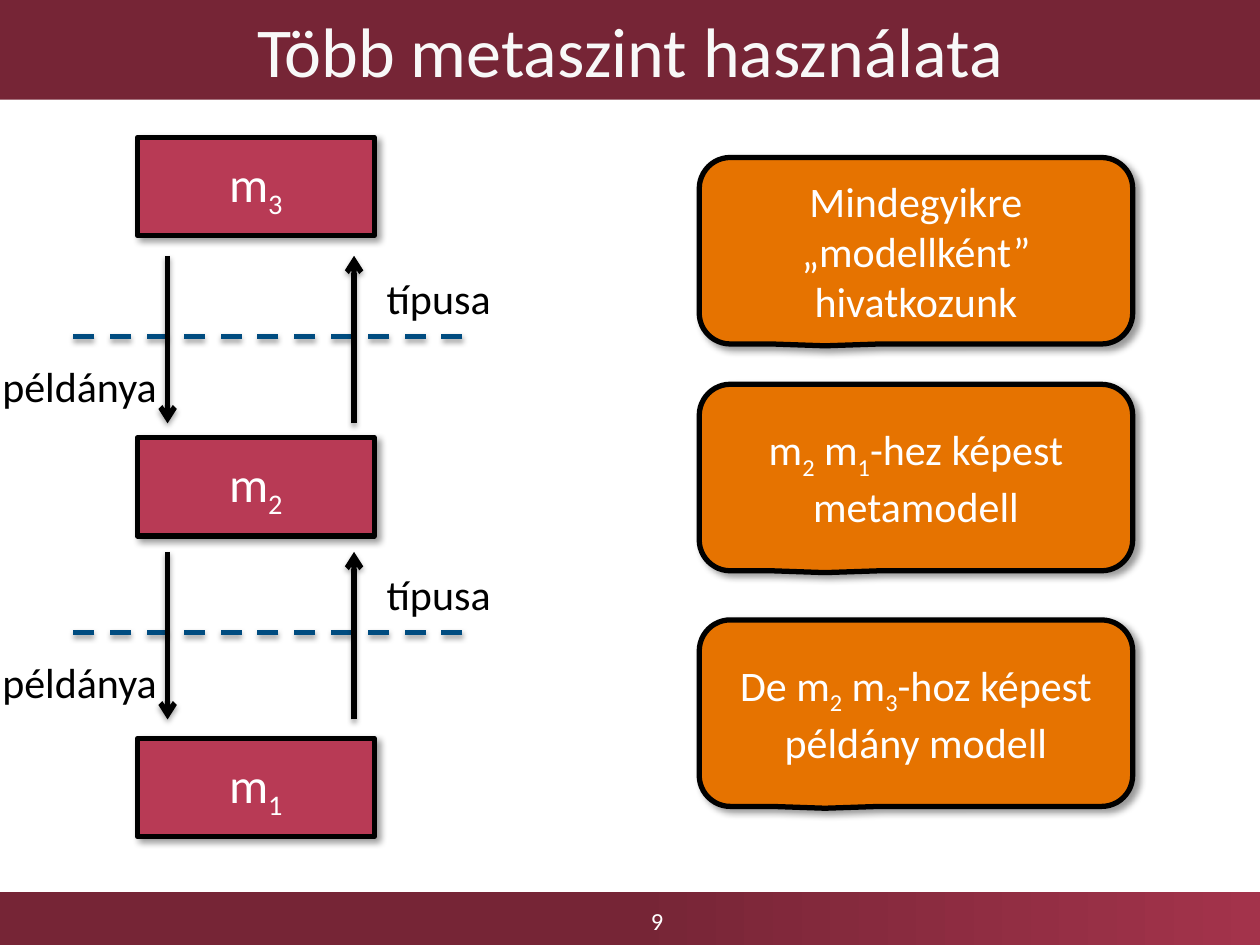
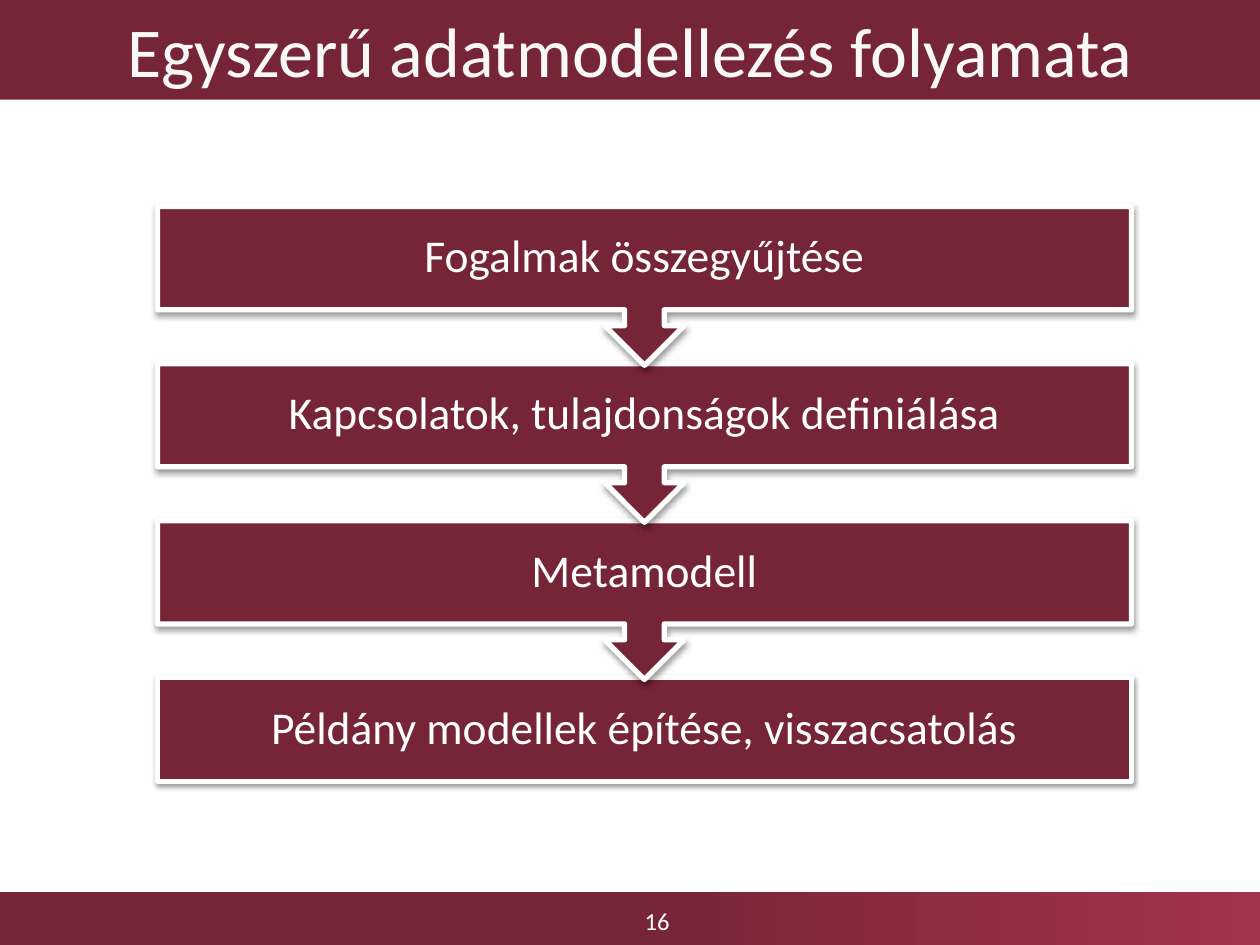
"""Build two slides on metalevels and the steps of simple data modelling."""
from lxml import etree
from pptx import Presentation
from pptx.dml.color import RGBColor
from pptx.enum.dml import MSO_LINE
from pptx.enum.shapes import MSO_CONNECTOR, MSO_SHAPE
from pptx.enum.text import MSO_ANCHOR, PP_ALIGN
from pptx.oxml.ns import qn
from pptx.util import Emu, Inches, Pt

RECT = MSO_SHAPE.RECTANGLE
NOTE = MSO_SHAPE.ROUNDED_RECTANGULAR_CALLOUT
STEP = MSO_SHAPE.DOWN_ARROW_CALLOUT
LINE = MSO_CONNECTOR.STRAIGHT
DASH = MSO_LINE.DASH
MID, TOP = MSO_ANCHOR.MIDDLE, MSO_ANCHOR.TOP
MIDST, LEFT = PP_ALIGN.CENTER, PP_ALIGN.LEFT

FONT = "Calibri"
WINE, ROSE, RED, GOLD = "762536", "A3334B", "B83A55", "E67300"
BLUE, BLACK, WHITE, PALE = "004C80", "000000", "FFFFFF", "F8F8F8"
WIDE, HIGH = 10, 7.5
BAND, FOOT = 0.79, 0.42
BOX_SHADE = (40, 4, 3, 45)
LINE_SHADE = (35, 3.1, 1.8, 90)
STEP_SHADE = (38, 3.1, 1.6, 90)

LEVELS = ["m_3", "m_2", "m_1"]
UP, DOWN = "típusa", "példánya"
NOTES = [
    (1.25, "Mindegyikre „modellként” hivatkozunk"),
    (3.05, "m_2 m_1-hez képest metamodell"),
    (4.92, "De m_2 m_3-hoz képest példány modell"),
]
STEPS = [
    "Fogalmak összegyűjtése",
    "Kapcsolatok, tulajdonságok definiálása",
    "Metamodell",
    "Példány modellek építése, visszacsatolás",
]


def rgb(code):
    """Turn a hex string into a colour."""
    return RGBColor.from_string(code)


def write(shape, text, size, color, align=MIDST, anchor=MID):
    """Put text in a shape, lowering each character after an underscore."""
    frame = shape.text_frame
    frame.word_wrap, frame.vertical_anchor = True, anchor
    para = frame.paragraphs[0]
    para.alignment = align
    font = para.font
    font.name, font.size, font.color.rgb = FONT, Pt(size), rgb(color)
    first, *rest = text.split("_")
    parts = [(first, False)]
    for part in rest:
        parts += [(part[0], True), (part[1:], False)]
    for part, low in parts:
        if part:
            run = para.add_run()
            run.text = part
            if low:
                run.font._element.set("baseline", "-25000")
    return para


def shade(props, alpha, blur, dist, angle):
    """Give shape properties an outer shadow."""
    list_ = props.find(qn("a:effectLst"))
    if list_ is None:
        list_ = etree.SubElement(props, qn("a:effectLst"))
    drop = etree.SubElement(
        list_, qn("a:outerShdw"), blurRad=str(Pt(blur)), dist=str(Pt(dist)),
        dir=str(angle * 60000), rotWithShape="0")
    tint = etree.SubElement(drop, qn("a:srgbClr"), val=BLACK)
    etree.SubElement(tint, qn("a:alpha"), val=str(alpha * 1000))


def block(slide, kind, area, fill, edge=None, glow=None):
    """Add a filled shape."""
    shape = slide.shapes.add_shape(kind, *map(Inches, area))
    shape.shadow.inherit = False
    shape.fill.solid()
    shape.fill.fore_color.rgb = rgb(fill)
    if edge:
        shape.line.color.rgb, shape.line.width = rgb(edge), Pt(3)
    else:
        shape.line.fill.background()
    if glow:
        shade(shape._element.spPr, *glow)
    return shape


def label(slide, area, text, size, color, **style):
    """Add a text box."""
    write(slide.shapes.add_textbox(*map(Inches, area)), text, size, color, **style)


def link(slide, start, end, color, dash=None):
    """Add a dashed line, or an arrow when no dash is given."""
    wire = slide.shapes.add_connector(LINE, *map(Inches, start + end))
    wire.line.color.rgb, wire.line.width = rgb(color), Pt(3)
    if dash:
        wire.line.dash_style = dash
    else:
        edge = wire._element.spPr.find(qn("a:ln"))
        etree.SubElement(edge, qn("a:tailEnd"), type="arrow")
    shade(wire._element.spPr, *LINE_SHADE)


def page(deck, title, number):
    """Add a slide with its title band and footer."""
    slide = deck.slides.add_slide(deck.slide_layouts[6])
    foot = block(slide, RECT, (0, HIGH - FOOT, WIDE, FOOT), WINE)
    foot.fill.gradient()
    foot.fill.gradient_angle = 0
    for stop, spot, tint in zip(foot.fill.gradient_stops, (0.5, 1), (WINE, ROSE)):
        stop.position, stop.color.rgb = spot, rgb(tint)
    label(slide, (3.59, 7.11, 3.25, 0.39), number, 14, WHITE)
    write(block(slide, RECT, (0, 0, WIDE, BAND), WINE), title, 40, PALE)
    return slide


def levels(deck):
    """Draw the stack of metalevels and the notes beside it."""
    slide = page(deck, "Több metaszint használata", "9")
    for row, name in enumerate(LEVELS):
        area = (1.09, 1.09 + row * 4.77 / 2, 1.88, 0.78)
        write(block(slide, RECT, area, RED, BLACK, BOX_SHADE), name, 28, WHITE)
    for row in range(len(LEVELS) - 1):
        top = 2.03 + row * 2.35
        end = top + 1.33
        link(slide, (3.67, top + 0.64), (0.47, top + 0.64), BLUE, DASH)
        for left, drop, text in ((2.97, 0.08, UP), (-0.08, 0.78, DOWN)):
            label(slide, (left, top + drop, 1.72, 0.5), text, 24, BLACK,
                  align=LEFT, anchor=TOP)
        link(slide, (2.81, end), (2.81, top), BLACK)
        link(slide, (1.33, top), (1.33, end), BLACK)
    for top, text in NOTES:
        note = block(slide, NOTE, (5.55, top, 3.44, 1.48), GOLD, BLACK, BOX_SHADE)
        note.adjustments[0], note.adjustments[1] = -0.21, 0.51
        write(note, text, 24, WHITE)


def steps(deck):
    """Draw the modelling steps from the last one up, so arrows overlap."""
    slide = page(deck, "Egyszerű adatmodellezés folyamata", "16")
    last = len(STEPS) - 1
    for row in range(last, -1, -1):
        kind, high = (RECT, 0.82) if row == last else (STEP, 1.26)
        area = (1.25, 1.64 + row * 3.74 / last, 7.73, high)
        shape = block(slide, kind, area, WINE, WHITE, STEP_SHADE)
        write(shape, STEPS[row], 26, WHITE).line_spacing = 0.9


def main():
    """Build and save the deck."""
    deck = Presentation()
    deck.slide_width, deck.slide_height = Emu(Inches(WIDE)), Emu(Inches(HIGH))
    levels(deck)
    steps(deck)
    deck.save("out.pptx")


if __name__ == "__main__":
    main()
